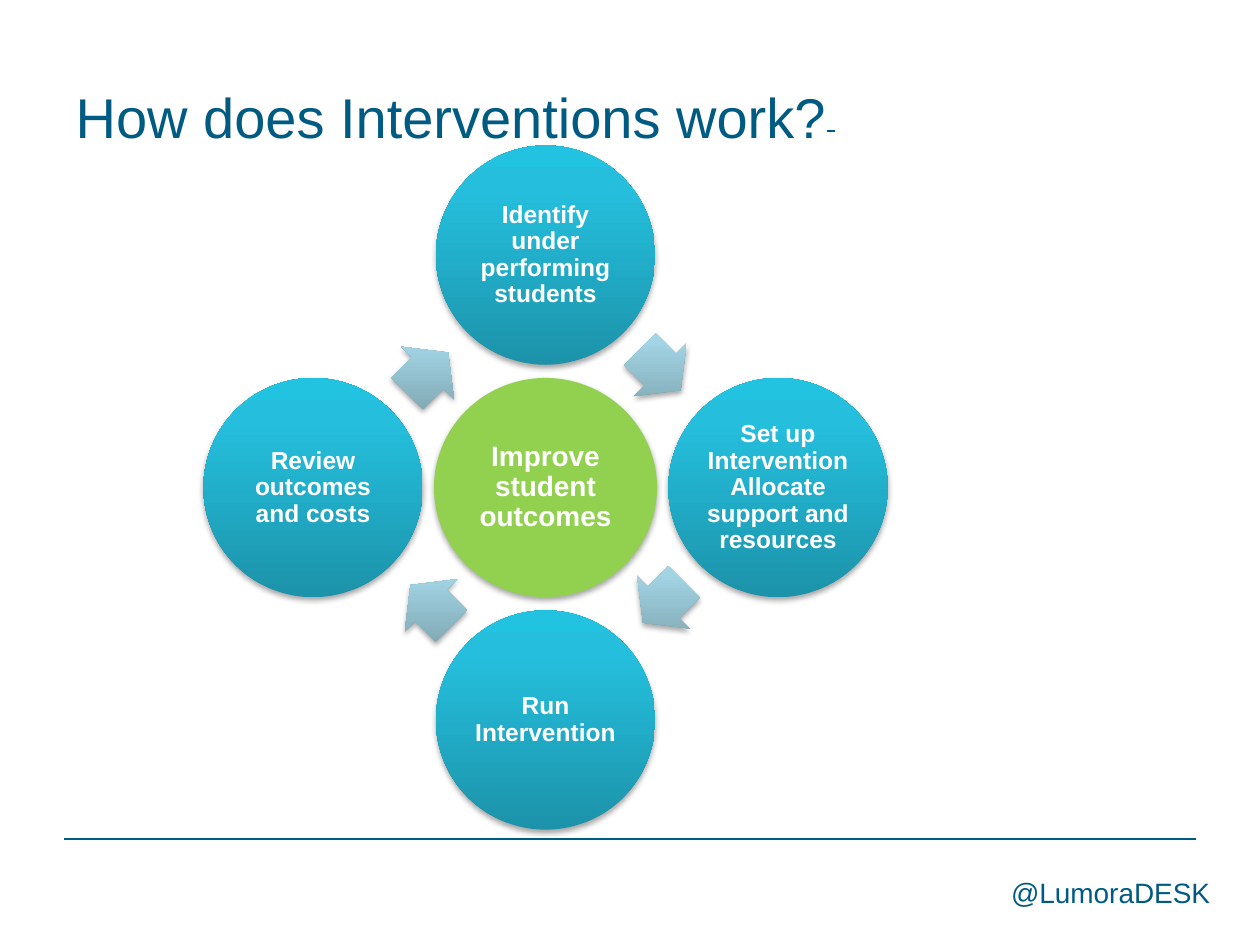
from lxml import etree
from pptx import Presentation
from pptx import util as u
from pptx.dml.color import RGBColor
from pptx.enum import shapes, text
from pptx.oxml import parse_xml
from pptx.oxml.ns import nsdecls, qn

COLS, ROWS = 20, 15
NAVY, WHITE, GREEN = "005B82", "FFFFFF", "92D050"
TEAL = [(0, "1C93AA"), (80, "25BFDD"), (100, "22C2E1")]
PALE = [(0, "7DA4AF"), (80, "A2D4E4"), (100, "A2D6E6")]
STEPS = [
    "Identify under performing students",
    "Set up Intervention Allocate support and resources",
    "Run Intervention",
    "Review outcomes and costs",
]


def tint(code):
    return RGBColor.from_string(code)


class Deck:
    font = "Arial"

    def __init__(self):
        self.prs = Presentation()
        self.prs.slide_width, self.prs.slide_height = u.Inches(10), u.Inches(7.5)
        self.slide = self.prs.slides.add_slide(self.prs.slide_layouts[5])

    def x(self, cols):
        return round(self.prs.slide_width * cols / COLS)

    def y(self, rows):
        return round(self.prs.slide_height * rows / ROWS)

    def box(self, left, top, wide, high):
        return self.x(left), self.y(top), self.x(wide), self.y(high)

    def style(self, run, size, color, bold=False):
        font = run.font
        font.name, font.size, font.bold = self.font, u.Pt(size), bold
        font.color.rgb = tint(color)

    def title(self, words, left, top, wide, high):
        shape = self.slide.shapes.title
        shape.left, shape.top, shape.width, shape.height = self.box(left, top, wide, high)
        frame = shape.text_frame
        frame.vertical_anchor = text.MSO_ANCHOR.MIDDLE
        para = frame.paragraphs[0]
        para.text = words
        para.alignment = text.PP_ALIGN.LEFT
        self.style(para.runs[0], 32, NAVY)
        dash = para.add_run()
        dash.text = " "
        self.style(dash, 18, NAVY)
        dash.font._element.set("strike", "sngStrike")

    def label(self, words, left, top, wide, high):
        frame = self.slide.shapes.add_textbox(*self.box(left, top, wide, high)).text_frame
        frame.word_wrap = True
        para = frame.paragraphs[0]
        para.text = words
        para.alignment = text.PP_ALIGN.CENTER
        self.style(para.runs[0], 16, NAVY)

    def rule(self, left, right, row):
        line = self.slide.shapes.add_connector(
            shapes.MSO_CONNECTOR.STRAIGHT, self.x(left), self.y(row), self.x(right), self.y(row))
        line.line.color.rgb = tint(NAVY)
        line.line.width = u.Pt(0.75)
        etree.SubElement(line._element.spPr, qn("a:effectLst"))

    def shape(self, kind, mid, wide, high, fill):
        left, top = mid[0] - wide / 2, mid[1] - high / 2
        shape = self.slide.shapes.add_shape(kind, *self.box(left, top, wide, high))
        shape.line.fill.background()
        if isinstance(fill, str):
            shape.fill.solid()
            shape.fill.fore_color.rgb = tint(fill)
        else:
            self.blend(shape, fill)
        self.shade(shape)
        return shape

    def blend(self, shape, stops):
        marks = "".join(f'<a:gs pos="{pos * 1000}"><a:srgbClr val="{code}"/></a:gs>'
                        for pos, code in stops)
        grad = parse_xml(f'<a:gradFill {nsdecls("a")} rotWithShape="0"><a:gsLst>{marks}</a:gsLst>'
                         '<a:lin ang="16200000" scaled="0"/></a:gradFill>')
        shape._element.spPr.find(qn("a:prstGeom")).addnext(grad)

    def shade(self, shape):
        shape.shadow.inherit = False
        glow = parse_xml(f'<a:outerShdw {nsdecls("a")} blurRad="40000" dist="23000" dir="5400000" '
                         'rotWithShape="0"><a:srgbClr val="000000"><a:alpha val="35000"/>'
                         '</a:srgbClr></a:outerShdw>')
        shape._element.spPr.find(qn("a:effectLst")).append(glow)

    def disc(self, words, mid, wide, high, fill, size):
        frame = self.shape(shapes.MSO_SHAPE.OVAL, mid, wide, high, fill).text_frame
        frame.word_wrap = True
        frame.vertical_anchor = text.MSO_ANCHOR.MIDDLE
        frame.margin_left = frame.margin_right = u.Inches(0.02)
        frame.margin_top = frame.margin_bottom = u.Inches(0.02)
        para = frame.paragraphs[0]
        para.text = words
        para.alignment = text.PP_ALIGN.CENTER
        para.line_spacing = 0.9
        self.style(para.runs[0], size, WHITE, True)

    def arrow(self, mid, turn):
        shape = self.shape(shapes.MSO_SHAPE.RIGHT_ARROW, mid, 0.92, 1.18, PALE)
        shape.adjustments[0], shape.adjustments[1] = 0.6, 0.5
        shape.rotation = turn


def main():
    deck = Deck()
    deck.rule(1.02, 18.98, 13.32)
    deck.label("@LumoraDESK", 15.66, 13.8, 3.94, 0.74)
    deck.title("How does Interventions work?", 1, 0.6, 18, 2.5)
    hub = 8.66, 7.74
    disc, gap = (0, -3.69), (1.82, -1.87)
    for turn, words in enumerate(STEPS):
        deck.disc(words, (hub[0] + disc[0], hub[1] + disc[1]), 3.48, 3.48, TEAL, 14)
        deck.arrow((hub[0] + gap[0], hub[1] + gap[1]), 45 + 90 * turn)
        disc, gap = (-disc[1], disc[0]), (-gap[1], gap[0])
    deck.disc("Improve student outcomes", hub, 3.54, 3.48, GREEN, 16)
    deck.prs.save("out.pptx")


if __name__ == "__main__":
    main()
